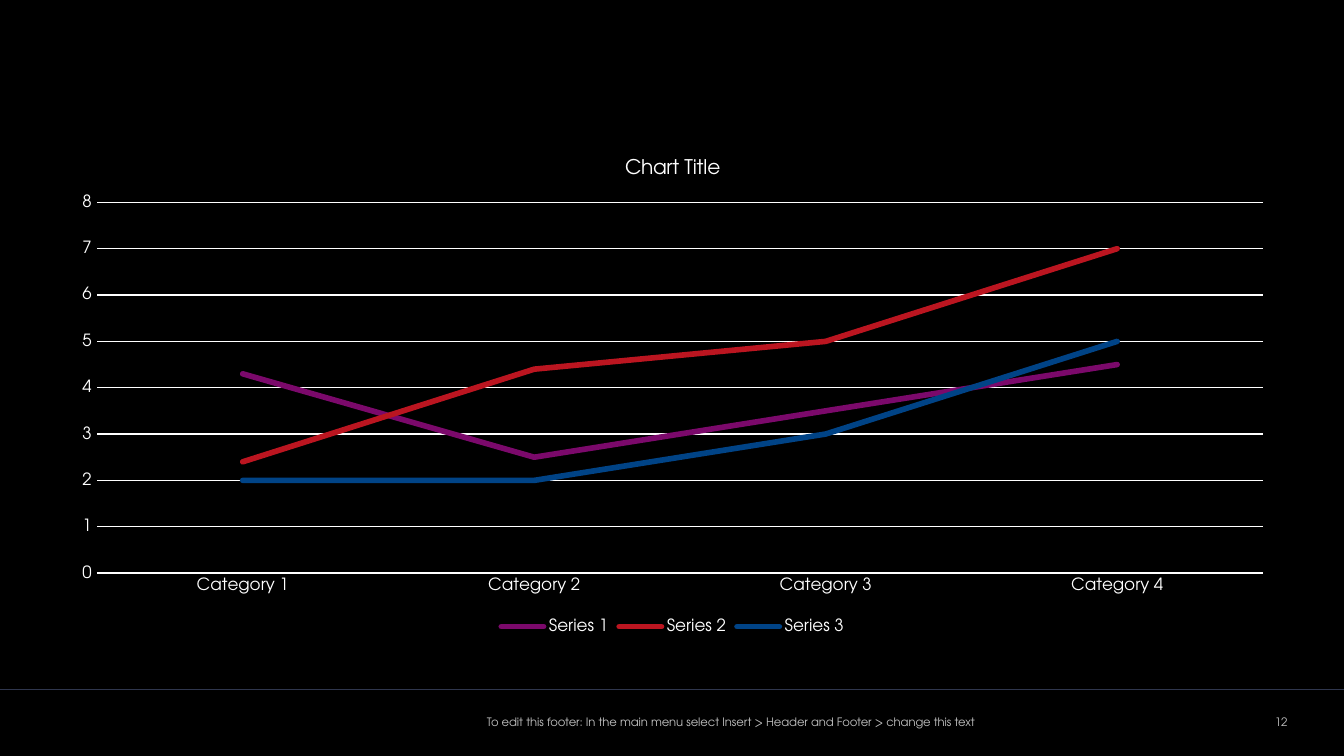
from pptx import Presentation
from pptx.chart.data import CategoryChartData
from pptx.dml.color import RGBColor
from pptx.enum.chart import XL_CHART_TYPE as ChartType, XL_LEGEND_POSITION as LegendPos
from pptx.enum.chart import XL_MARKER_STYLE as Marker, XL_TICK_MARK as Tick
from pptx.enum.shapes import MSO_CONNECTOR as Connector
from pptx.enum.text import MSO_ANCHOR as Anchor, PP_ALIGN as Align
from pptx.oxml.ns import qn
from pptx.util import Inches, Pt
from lxml.etree import SubElement

FONT = "TeX Gyre Adventor"
BLACK = RGBColor(0x00, 0x00, 0x00)
WHITE = RGBColor(0xFF, 0xFF, 0xFF)
GREY = RGBColor(0xBF, 0xBF, 0xBF)
NAVY = RGBColor(0x2F, 0x36, 0x4D)
PURPLE = RGBColor(0x7B, 0x09, 0x6B)
RED = RGBColor(0xBB, 0x15, 0x20)
BLUE = RGBColor(0x00, 0x43, 0x86)

WIDTH = 10
HEIGHT = WIDTH * 9 / 16
FOOTER_TOP, FOOTER_HEIGHT = 5.21, 0.33
CATEGORIES = [f"Category {n}" for n in range(1, 5)]
SERIES = [
    ("Series 1", (4.3, 2.5, 3.5, 4.5), PURPLE),
    ("Series 2", (2.4, 4.4, 5, 7), RED),
    ("Series 3", (2, 2, 3, 5), BLUE),
]


def set_font(font, size, color):
    """Apply the slide's typeface with a size and colour."""
    font.name, font.size = FONT, Pt(size)
    font.bold = False
    font.color.rgb = color


def set_line(line, color, width):
    """Give a line its colour and width in points."""
    line.color.rgb = color
    line.width = Pt(width)


def add_rule(slide, y):
    """Draw the rule above the footer."""
    rule = slide.shapes.add_connector(
        Connector.STRAIGHT, 0, Inches(y), Inches(WIDTH + 0.03), Inches(y))
    set_line(rule.line, NAVY, 1)
    SubElement(rule._element.spPr, qn("a:effectLst"))


def add_footer(slide, text, left, width, align, right_inset=0.1):
    """Add one text box in the footer row."""
    box = slide.shapes.add_textbox(
        Inches(left), Inches(FOOTER_TOP), Inches(width), Inches(FOOTER_HEIGHT))
    tf = box.text_frame
    tf.word_wrap = True
    tf.vertical_anchor = Anchor.MIDDLE
    tf.margin_right = Inches(right_inset)
    p = tf.paragraphs[0]
    p.text, p.alignment = text, align
    set_font(p.font, 6.15, GREY)


def style_axes(chart):
    """Style both axes and the gridlines."""
    for axis in (chart.category_axis, chart.value_axis):
        axis.major_tick_mark = axis.minor_tick_mark = Tick.NONE
        set_font(axis.tick_labels.font, 9, WHITE)
    set_line(chart.category_axis.format.line, WHITE, 0.75)
    values = chart.value_axis
    values.minimum_scale, values.maximum_scale, values.major_unit = 0, 8, 1
    values.format.line.fill.background()
    set_line(values.major_gridlines.format.line, WHITE, 0.75)


def add_line_chart(slide, left, top, width, height):
    """Add the line chart with its title and legend."""
    data = CategoryChartData()
    data.categories = CATEGORIES
    for name, values, _ in SERIES:
        data.add_series(name, values)
    chart = slide.shapes.add_chart(
        ChartType.LINE, Inches(left), Inches(top), Inches(width), Inches(height), data).chart
    set_font(chart.font, 9, WHITE)
    chart.has_title = True
    p = chart.chart_title.text_frame.paragraphs[0]
    p.text = "Chart Title"
    set_font(p.font, 10.8, WHITE)
    chart.chart_title.include_in_layout = False
    chart.has_legend = True
    chart.legend.position = LegendPos.BOTTOM
    chart.legend.include_in_layout = False
    set_font(chart.legend.font, 9, WHITE)
    style_axes(chart)
    plot = chart.plots[0]
    plot.vary_by_categories = False
    for series, (_, _, color) in zip(plot.series, SERIES):
        set_line(series.format.line, color, 3)
        series.format.line._get_or_add_ln().set("cap", "rnd")
        series.marker.style = Marker.NONE
        series.smooth = False


def main():
    """Build and save the slide."""
    prs = Presentation()
    prs.slide_width, prs.slide_height = Inches(WIDTH), Inches(HEIGHT)
    slide = prs.slides.add_slide(prs.slide_layouts[6])
    slide.background.fill.solid()
    slide.background.fill.fore_color.rgb = BLACK
    add_rule(slide, 5.13)
    add_line_chart(slide, 0.43, 1.02, 9.15, 3.74)
    add_footer(slide, "12", 8.91, 0.67, Align.RIGHT, right_inset=0)
    add_footer(
        slide,
        "To edit this footer: In the main menu select Insert > Header and Footer > change this text",
        2.2, 6.47, Align.CENTER)
    prs.save("out.pptx")


if __name__ == "__main__":
    main()
